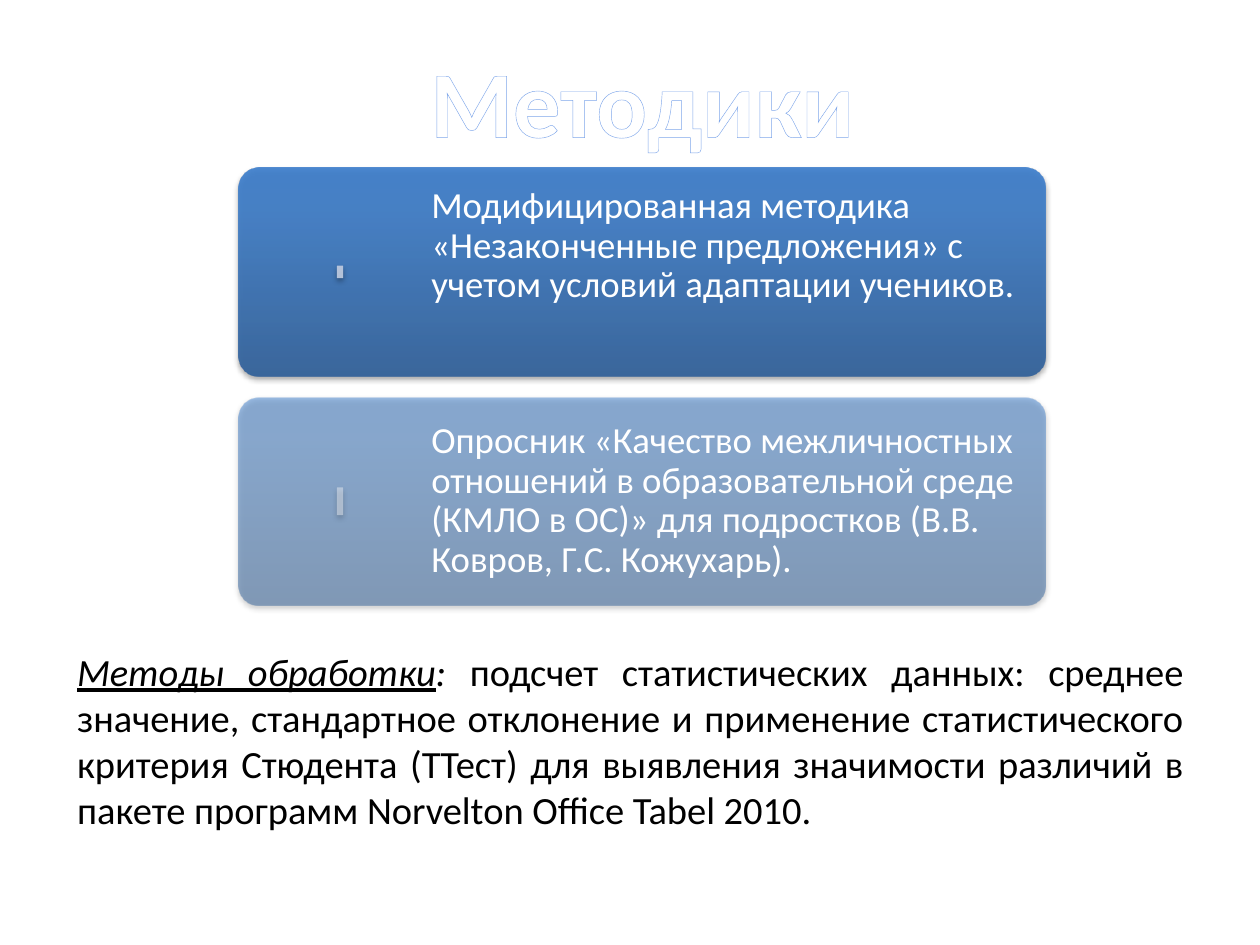
"""Build the slide on research methods."""
from dataclasses import dataclass

from lxml.etree import SubElement as Sub
from pptx import Presentation
from pptx.dml.color import RGBColor
from pptx.enum.shapes import MSO_SHAPE as Kind
from pptx.enum.text import MSO_ANCHOR as Anchor, MSO_AUTO_SIZE as Fit, PP_ALIGN as Align
from pptx.oxml.ns import qn
from pptx.shapes.autoshape import Shape
from pptx.slide import Slide
from pptx.text.text import _Run as Run
from pptx.util import Pt

WHITE = RGBColor(0xFF, 0xFF, 0xFF)
BLACK = RGBColor(0, 0, 0)
EDGE = RGBColor(0x7E, 0xA6, 0xEA)
PALE = RGBColor(0xC2, 0xCD, 0xE1)
MIST = RGBColor(0xE9, 0xED, 0xF4)
DARK = RGBColor(0x2F, 0x5F, 0x99)
MID = RGBColor(0x3D, 0x7C, 0xC7)
LIGHT = RGBColor(0x3A, 0x7C, 0xCB)
STOPS = ((0, DARK), (80, MID), (100, LIGHT))

FONT = "Calibri"
LEFT, TOP, WIDE, HIGH, STEP = 136, 96, 461.5, 118.8, 131
INSET = 6.5


@dataclass
class Card:
    text: str
    alpha: int
    tint: RGBColor
    mark: float
    foot: float


CARDS = (
    Card("Модифицированная методика «Незаконченные предложения» с учетом "
         "условий адаптации учеников.", 90, PALE, 7.2, 36),
    Card("Опросник «Качество межличностных отношений в образовательной среде "
         "(КМЛО в ОС)» для подростков (В.В. Ковров, Г.С. Кожухарь).",
         50, MIST, 15.8, INSET),
)


def style(run: Run, size: float, color: RGBColor) -> None:
    run.font.name = FONT
    run.font.size = Pt(size)
    run.font.color.rgb = color


def tone(node, color: RGBColor, alpha: int) -> None:
    clr = Sub(node, qn("a:srgbClr"), val=str(color))
    Sub(clr, qn("a:alpha"), val=str(alpha * 1000))


def block(slide: Slide, x: float, y: float, w: float, h: float) -> Shape:
    shape = slide.shapes.add_shape(Kind.ROUNDED_RECTANGLE, Pt(x), Pt(y), Pt(w), Pt(h))
    shape.adjustments[0] = 0.1
    shape.line.fill.background()
    shape.shadow.inherit = False
    glow = shape._element.spPr.find(qn("a:effectLst"))
    shade = Sub(glow, qn("a:outerShdw"), blurRad=str(Pt(3.1)), dist=str(Pt(1.8)),
                dir="5400000", rotWithShape="0")
    tone(shade, BLACK, 35)
    return shape


def blend(shape: Shape, alpha: int) -> None:
    shape.fill.gradient()
    shape.fill.gradient_angle = 90
    stops = shape._element.spPr.find(".//" + qn("a:gsLst"))
    stops.clear()
    for pos, color in STOPS:
        tone(Sub(stops, qn("a:gs"), pos=str(pos * 1000)), color, alpha)


def tint(shape: Shape, color: RGBColor, alpha: int) -> None:
    shape.fill.solid()
    shape.fill.fore_color.rgb = color
    clr = shape._element.spPr.find(qn("a:solidFill"))[0]
    Sub(clr, qn("a:alpha"), val=str(alpha * 1000))


def draw(slide: Slide, card: Card, y: float) -> None:
    blend(block(slide, LEFT, y, WIDE, HIGH), card.alpha)
    box = slide.shapes.add_textbox(Pt(240), Pt(y), Pt(357), Pt(HIGH))
    frame = box.text_frame
    frame.word_wrap = True
    frame.vertical_anchor = Anchor.MIDDLE
    frame.margin_left = frame.margin_right = frame.margin_top = Pt(INSET)
    frame.margin_bottom = Pt(card.foot)
    frame.text = card.text
    para = frame.paragraphs[0]
    para.line_spacing = 0.9
    style(para.runs[0], 21, WHITE)
    mark = block(slide, 192.5, y + (HIGH - card.mark) / 2, 3.6, card.mark)
    tint(mark, card.tint, card.alpha)


def head(slide: Slide) -> None:
    title = slide.shapes.title
    title.left, title.top, title.width, title.height = Pt(238), Pt(21), Pt(258), Pt(73)
    frame = title.text_frame
    frame.text = "Методики"
    frame.word_wrap = False
    frame.auto_size = Fit.NONE
    frame.vertical_anchor = Anchor.TOP
    para = frame.paragraphs[0]
    para.alignment = Align.CENTER
    run = para.runs[0]
    style(run, 54, WHITE)
    run.font.bold = True
    props = run._r.get_or_add_rPr()
    line = Sub(props, qn("a:ln"), w=str(Pt(2.48)))
    Sub(Sub(line, qn("a:solidFill")), qn("a:srgbClr"), val=str(EDGE))
    props.insert(0, line)


def note(slide: Slide) -> None:
    box = slide.shapes.add_textbox(Pt(37), Pt(366.5), Pt(646.5), Pt(114))
    frame = box.text_frame
    frame.word_wrap = True
    para = frame.paragraphs[0]
    para.alignment = Align.JUSTIFY
    parts = (
        ("Методы обработки", True, True),
        (": ", True, False),
        ("подсчет статистических данных: среднее значение, стандартное отклонение "
         "и применение статистического критерия Стюдента (ТТест) для выявления "
         "значимости различий в пакете программ Norvelton Office Tabel 2010.",
         False, False),
    )
    for text, slant, under in parts:
        run = para.add_run()
        run.text = text
        style(run, 22, BLACK)
        run.font.italic = slant
        run.font.underline = under


def main() -> None:
    deck = Presentation()
    deck.slide_width, deck.slide_height = Pt(720), Pt(540)
    slide = deck.slides.add_slide(deck.slide_layouts[5])
    head(slide)
    for i, card in enumerate(CARDS):
        draw(slide, card, TOP + i * STEP)
    note(slide)
    deck.save("out.pptx")


if __name__ == "__main__":
    main()
